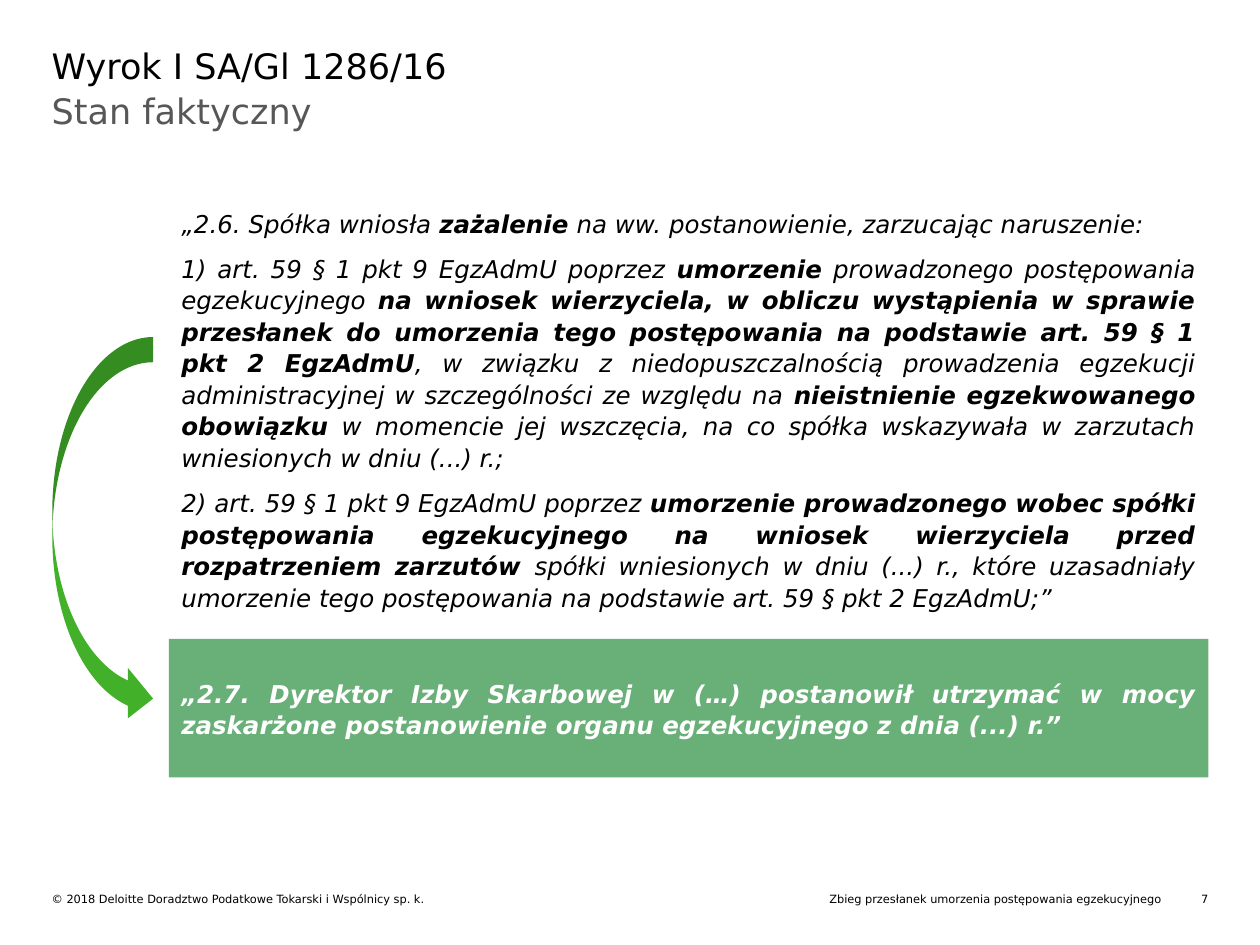
"""Build the slide on the facts of judgment I SA/Gl 1286/16."""
from lxml import etree
from pptx import Presentation
from pptx.dml.color import RGBColor
from pptx.enum import shapes, text
from pptx.oxml.ns import qn
from pptx.util import Inches, Pt

FONT = "DejaVu Sans"
LEFT, RIGHT = 0.41, 9.59
QUOTE_LEFT = 1.34
QUOTE_WIDTH = RIGHT - QUOTE_LEFT
ALIGN = text.PP_ALIGN


def style(para, size, color, align=ALIGN.LEFT, italic=False, bold=False):
    para.alignment = align
    para.font.name = FONT
    para.font.size = Pt(size)
    para.font.italic = italic
    para.font.bold = bold
    para.font.color.rgb = RGBColor.from_string(color)


def prepare(frame, anchor=text.MSO_ANCHOR.TOP, margin=0):
    frame.word_wrap = True
    frame.auto_size = text.MSO_AUTO_SIZE.NONE
    frame.vertical_anchor = anchor
    frame.margin_left = frame.margin_right = Inches(margin)
    frame.margin_top = frame.margin_bottom = Inches(margin)


deck = Presentation()
deck.slide_width, deck.slide_height = Inches(10), Inches(7.5)
page = deck.slides.add_slide(deck.slide_layouts[1])

headings = [
    (page.shapes.title, 0.35, 0.44, "Wyrok I SA/Gl 1286/16", "000000"),
    (page.placeholders[1], 0.71, 0.83, "Stan faktyczny", "575757"),
]
for holder, top, height, wording, color in headings:
    holder.left, holder.top = Inches(LEFT), Inches(top)
    holder.width, holder.height = Inches(RIGHT - LEFT), Inches(height)
    prepare(holder.text_frame)
    para = holder.text_frame.paragraphs[0]
    para.text = wording
    para.space_before = Pt(0)
    properties = para._p.get_or_add_pPr()
    properties.set("marL", "0")
    properties.set("indent", "0")
    etree.SubElement(properties, qn("a:buNone"))
    style(para, 20, color)

complaint = [
    [
        ("„2.6. Spółka wniosła ", False),
        ("zażalenie", True),
        (" na ww. postanowienie, zarzucając naruszenie:", False),
    ],
    [
        ("1) art. 59 § 1 pkt 9 EgzAdmU poprzez ", False),
        ("umorzenie", True),
        (" prowadzonego postępowania egzekucyjnego ", False),
        ("na wniosek wierzyciela, w obliczu wystąpienia w sprawie przesłanek do umorzenia "
         "tego postępowania na podstawie art. 59 § 1 pkt 2 EgzAdmU", True),
        (", w związku z niedopuszczalnością prowadzenia egzekucji administracyjnej "
         "w szczególności ze względu na ", False),
        ("nieistnienie egzekwowanego obowiązku", True),
        (" w momencie jej wszczęcia, na co spółka wskazywała w zarzutach "
         "wniesionych w dniu (...) r.;", False),
    ],
    [
        ("2) art. 59 § 1 pkt 9 EgzAdmU poprzez ", False),
        ("umorzenie prowadzonego wobec spółki postępowania egzekucyjnego na wniosek "
         "wierzyciela przed rozpatrzeniem zarzutów ", True),
        ("spółki wniesionych w dniu (...) r., które uzasadniały umorzenie tego "
         "postępowania na podstawie art. 59 § pkt 2 EgzAdmU;”", False),
    ],
]
box = page.shapes.add_textbox(Inches(QUOTE_LEFT), Inches(1.59), Inches(QUOTE_WIDTH), Inches(3.35))
frame = box.text_frame
prepare(frame)
frame.margin_left = frame.margin_right = Inches(0.1)
frame.margin_top = frame.margin_bottom = Inches(0.05)
for index, pieces in enumerate(complaint):
    para = frame.add_paragraph() if index else frame.paragraphs[0]
    para.line_spacing = 1.07
    para.space_after = Pt(8)
    style(para, 14, "000000", ALIGN.JUSTIFY, italic=True)
    for wording, bold in pieces:
        span = para.add_run()
        span.text = wording
        span.font.bold = bold

ruling = page.shapes.add_shape(
    shapes.MSO_SHAPE.RECTANGLE,
    Inches(QUOTE_LEFT), Inches(5.07), Inches(QUOTE_WIDTH), Inches(1.1))
arrow = page.shapes.add_shape(
    shapes.MSO_SHAPE.CURVED_UP_ARROW, Inches(-0.72), Inches(3.81), Inches(3.07), Inches(0.8))
arrow.rotation = 90
for shape, color in [(ruling, "69AF78"), (arrow, "43B02A")]:
    shape.shadow.inherit = False
    shape.fill.solid()
    shape.fill.fore_color.rgb = RGBColor.from_string(color)
    shape.line.fill.background()

prepare(ruling.text_frame, text.MSO_ANCHOR.MIDDLE, 0.1)
para = ruling.text_frame.paragraphs[0]
para.text = ("„2.7. Dyrektor Izby Skarbowej w (…) postanowił utrzymać w mocy zaskarżone "
             "postanowienie organu egzekucyjnego z dnia (...) r.”")
para.line_spacing = 1.06
style(para, 14, "FFFFFF", ALIGN.JUSTIFY, italic=True, bold=True)

footers = [
    (LEFT, 4.39, "© 2018 Deloitte Doradztwo Podatkowe Tokarski i Wspólnicy sp. k.", ALIGN.LEFT),
    (5.2, 4.02, "Zbieg przesłanek umorzenia postępowania egzekucyjnego", ALIGN.RIGHT),
    (9.34, 0.25, "7", ALIGN.RIGHT),
]
for left, width, wording, align in footers:
    footer = page.shapes.add_textbox(Inches(left), Inches(7.08), Inches(width), Inches(0.11))
    prepare(footer.text_frame)
    para = footer.text_frame.paragraphs[0]
    para.text = wording
    style(para, 6.5, "000000", align)

deck.save("out.pptx")
